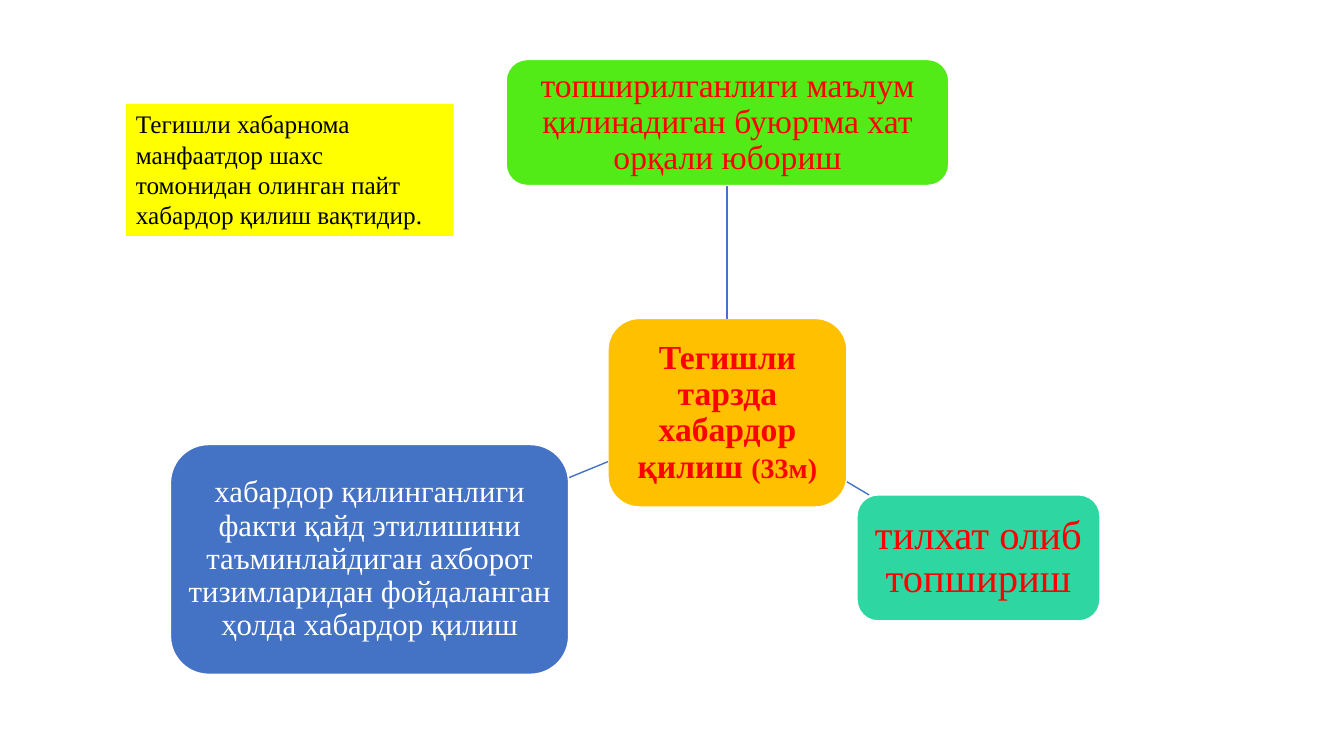
from lxml import etree
from pptx import Presentation
from pptx.dml.color import RGBColor
from pptx.enum import shapes as sh, text as tx
from pptx.oxml.ns import qn
from pptx.util import Inches, Pt

FONT = "Times New Roman"
BLUE, RED, WHITE = "4472C4", "FF0000", "FFFFFF"


def color(code):
    return RGBColor.from_string(code)


def write(shape, runs, ink=RED, bold=False, inset=None, center=True):
    """Fill a shape with one paragraph of (text, size) runs."""
    frame = shape.text_frame
    frame.word_wrap = True
    frame.vertical_anchor = tx.MSO_ANCHOR.MIDDLE if center else tx.MSO_ANCHOR.TOP
    if inset is not None:
        frame.margin_left = frame.margin_right = Inches(inset)
        frame.margin_top = frame.margin_bottom = Inches(inset)
    para = frame.paragraphs[0]
    para.alignment = tx.PP_ALIGN.CENTER if center else tx.PP_ALIGN.LEFT
    para.line_spacing = 0.9 if center else 1.0
    for words, size in runs:
        run = para.add_run()
        run.text = words
        run.font.name = FONT
        run.font.size = Pt(size)
        run.font.bold = bold
        run.font.color.rgb = color(ink)


def block(slide, kind, box, fill, edge=None):
    shape = slide.shapes.add_shape(kind, *map(Inches, box))
    shape.shadow.inherit = False
    shape.fill.solid()
    shape.fill.fore_color.rgb = color(fill)
    if edge:
        shape.line.color.rgb = color(edge)
        shape.line.width = Pt(1)
    else:
        shape.line.fill.background()
    return shape


def node(slide, box, fill, runs, **style):
    shape = block(slide, sh.MSO_SHAPE.ROUNDED_RECTANGLE, box, fill, WHITE)
    write(shape, runs, **style)


def link(slide, start, end):
    line = slide.shapes.add_connector(
        sh.MSO_CONNECTOR.STRAIGHT, *map(Inches, start + end))
    line.line.color.rgb = color(BLUE)
    line.line.width = Pt(1)
    etree.SubElement(line._element.spPr, qn("a:effectLst"))


def diagram(slide, box):
    """Hub with three linked nodes; places are offsets inside the box."""
    left, top = box[:2]

    def at(x, y, *size):
        return (left + x, top + y) + size

    # Hub
    node(slide, at(4.34, 2.57, 2.37, 1.87), "FFC000",
         [("Тегишли тарзда хабардор қилиш ", 24), ("(33м)", 20)],
         bold=True, inset=0.07)
    # Outer nodes: place, fill, text, size, ink, inset, link start and end
    outer = [
        (at(3.33, 0, 4.39, 1.25), "53EB17",
         "топширилганлиги маълум қилинадиган буюртма хат орқали юбориш",
         24, RED, 0.07, at(5.52, 2.57), at(5.52, 1.26)),
        (at(6.81, 4.32, 2.41, 1.25), "2ED7A1", "тилхат олиб топшириш",
         29, RED, 0.08, at(6.71, 4.19), at(6.93, 4.32)),
        (at(0, 3.82, 3.95, 2.28), BLUE,
         "хабардор қилинганлиги факти қайд этилишини таъминлайдиган ахборот "
         "тизимларидан фойдаланган ҳолда хабардор қилиш",
         22, WHITE, 0.06, at(4.34, 3.99), at(3.95, 4.15)),
    ]
    for place, fill, words, size, ink, inset, start, end in outer:
        link(slide, start, end)
        node(slide, place, fill, [(words, size)], ink=ink, inset=inset)


def note(slide, box):
    """Yellow remark beside the diagram."""
    shape = block(slide, sh.MSO_SHAPE.RECTANGLE, box, "FFFF00")
    write(shape, [("Тегишли хабарнома манфаатдор шахс томонидан олинган пайт "
                   "хабардор қилиш вақтидир.", 18)], ink="000000", center=False)


def main():
    deck = Presentation()
    deck.slide_width, deck.slide_height = Inches(13.33), Inches(7.5)
    slide = deck.slides.add_slide(deck.slide_layouts[6])
    diagram(slide, (1.69, 0.59, 9.22, 6.1))
    note(slide, (1.25, 1.03, 3.25, 1.31))
    deck.save("out.pptx")


if __name__ == "__main__":
    main()
